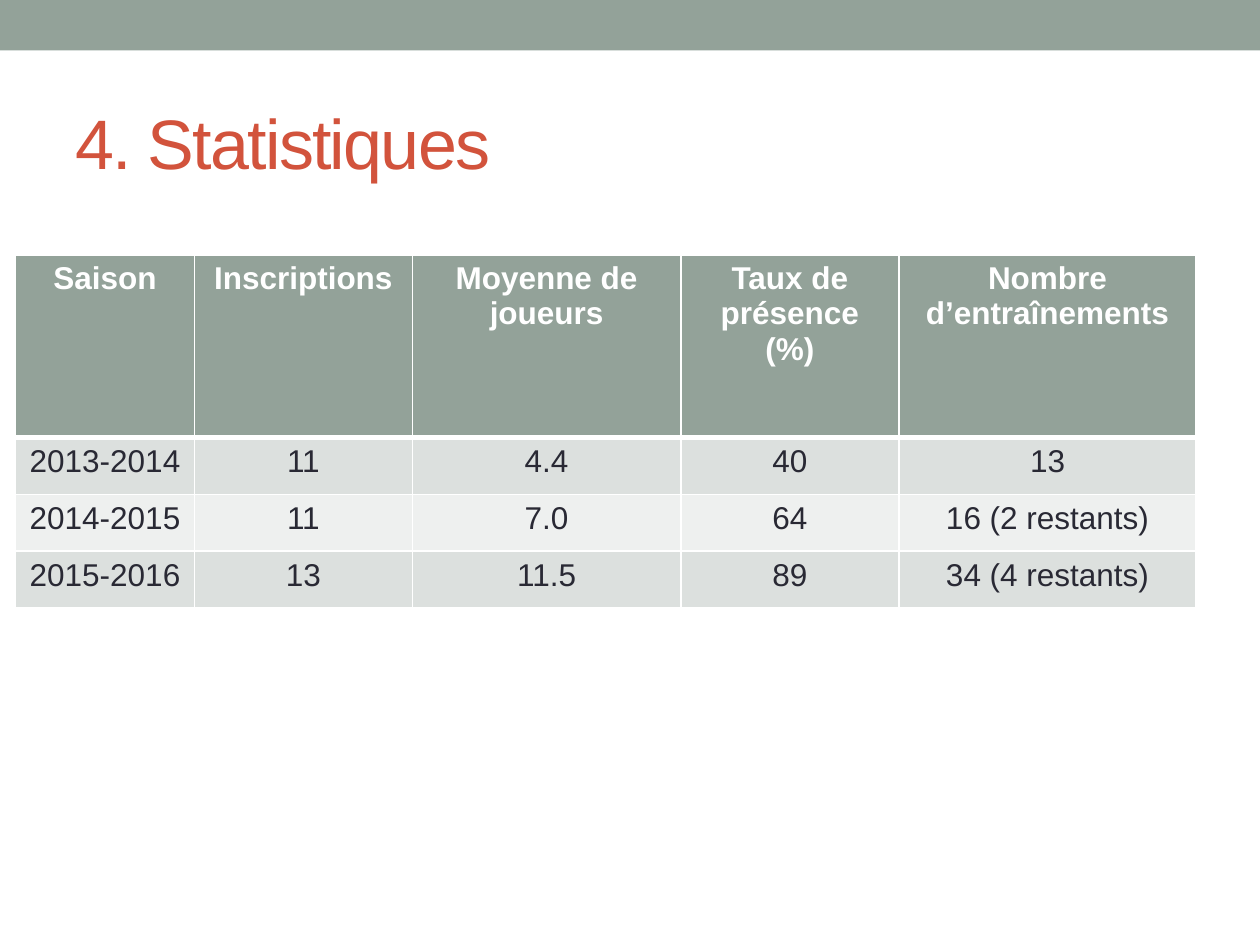
"""Build the season statistics slide."""
from lxml import etree
from pptx import Presentation
from pptx.dml.color import RGBColor
from pptx.enum import shapes, text
from pptx.oxml import ns
from pptx.util import Pt

TITLE = "4. Statistiques"
ROWS = [
    ("Saison", "Inscriptions", "Moyenne de joueurs", "Taux de présence (%)",
     "Nombre d’entraînements"),
    ("2013-2014", "11", "4.4", "40", "13"),
    ("2014-2015", "11", "7.0", "64", "16 (2 restants)"),
    ("2015-2016", "13", "11.5", "89", "34 (4 restants)"),
]
WIDTHS = [102.2, 124.6, 153.4, 124.6, 169.9]
HEAD, BODY = 104.4, 32.5

SAGE = RGBColor(0x93, 0xA2, 0x99)
RED = RGBColor(0xD2, 0x53, 0x3C)
INK = RGBColor(0x29, 0x29, 0x34)
WHITE = RGBColor(0xFF, 0xFF, 0xFF)
BANDS = [RGBColor(0xEE, 0xF0, 0xEF), RGBColor(0xDC, 0xE0, 0xDE)]


def style(para, size, color, bold=False):
    for run in para.runs:
        font = run.font
        font.name, font.size, font.bold = "Arial", Pt(size), bold
        font.color.rgb = color


def border(cell, side, width):
    line = etree.SubElement(cell._tc.get_or_add_tcPr(), ns.qn("a:ln" + side),
                            w=str(Pt(width)))
    fill = etree.SubElement(line, ns.qn("a:solidFill"))
    etree.SubElement(fill, ns.qn("a:srgbClr"), val=str(WHITE))


def add_bar(slide):
    bar = slide.shapes.add_shape(shapes.MSO_SHAPE.RECTANGLE, 0, 0, Pt(720), Pt(28.8))
    bar.shadow.inherit = False
    bar.fill.solid()
    bar.fill.fore_color.rgb = SAGE
    bar.line.fill.background()


def add_title(slide):
    box = slide.shapes.add_textbox(Pt(36), Pt(41.8), Pt(648), Pt(77.8))
    frame = box.text_frame
    frame.word_wrap = True
    frame.vertical_anchor = text.MSO_ANCHOR.MIDDLE
    frame.text = TITLE
    para = frame.paragraphs[0]
    style(para, 40, RED)
    para.runs[0].font._element.set("spc", "-100")


def add_stats(slide):
    heights = [HEAD] + [BODY] * (len(ROWS) - 1)
    table = slide.shapes.add_table(len(ROWS), len(WIDTHS), Pt(8.9), Pt(145.6),
                                   Pt(sum(WIDTHS)), Pt(sum(heights))).table
    for col, width in zip(table.columns, WIDTHS):
        col.width = Pt(width)
    for r, (row, height) in enumerate(zip(ROWS, heights)):
        table.rows[r].height = Pt(height)
        for c, words in enumerate(row):
            cell = table.cell(r, c)
            for side in "LRTB":
                thick = (r, side) in [(0, "B"), (1, "T")]
                border(cell, side, 3 if thick else 1)
            cell.fill.solid()
            cell.fill.fore_color.rgb = BANDS[r % 2] if r else SAGE
            cell.text_frame.text = words
            para = cell.text_frame.paragraphs[0]
            para.alignment = text.PP_ALIGN.CENTER
            style(para, 18, INK if r else WHITE, r == 0)


def main():
    deck = Presentation()
    deck.slide_width, deck.slide_height = Pt(720), Pt(540)
    slide = deck.slides.add_slide(deck.slide_layouts[6])
    add_bar(slide)
    add_title(slide)
    add_stats(slide)
    deck.save("out.pptx")


if __name__ == "__main__":
    main()
